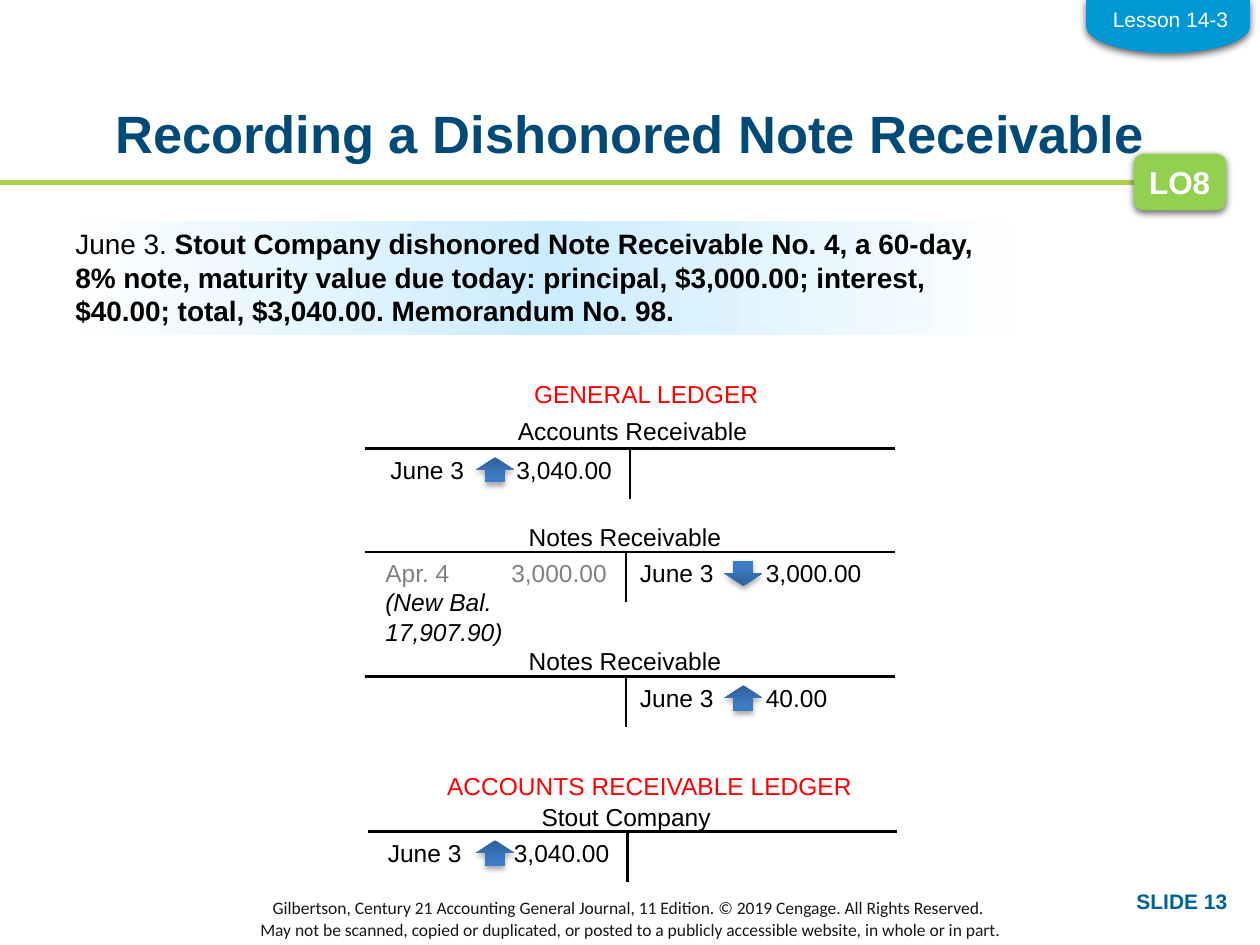
from lxml import etree
from pptx import Presentation
from pptx.dml.color import RGBColor
from pptx.enum.shapes import MSO_CONNECTOR, MSO_SHAPE
from pptx.enum.text import MSO_ANCHOR, PP_ALIGN
from pptx.oxml.ns import qn
from pptx.util import Inches, Pt

LEFT, MID, RIGHT = PP_ALIGN.LEFT, PP_ALIGN.CENTER, PP_ALIGN.RIGHT
TOP, MIDDLE = MSO_ANCHOR.TOP, MSO_ANCHOR.MIDDLE
LINE = MSO_CONNECTOR.STRAIGHT
RECT, ROUND = MSO_SHAPE.RECTANGLE, MSO_SHAPE.ROUNDED_RECTANGLE
ARROW, DELAY = MSO_SHAPE.DOWN_ARROW, MSO_SHAPE.FLOWCHART_DELAY

BLACK = RGBColor(0, 0, 0)
WHITE = RGBColor(255, 255, 255)
GRAY = RGBColor(0x80, 0x80, 0x80)
RED = RGBColor(255, 0, 0)
NAVY = RGBColor(0x00, 0x4A, 0x78)
TEAL = RGBColor(0x00, 0x61, 0x98)
BLUE = RGBColor(0x00, 0x98, 0xD4)
PALE = RGBColor(0xCC, 0xEC, 0xFF)
GREEN = RGBColor(0x92, 0xD0, 0x50)
LIME = RGBColor(0xAA, 0xD2, 0x4B)
INK = RGBColor(0x18, 0x17, 0x17)
DEEP = RGBColor(0x2F, 0x5F, 0x99)
STEEL = RGBColor(0x3D, 0x7C, 0xC7)
SKY = RGBColor(0x3A, 0x7C, 0xCB)

# Content
TITLE = "Recording a Dishonored Note Receivable"
EVENT = [
    ("June 3. ", {}),
    ("Stout Company dishonored Note Receivable No. 4, a 60-day, 8% note, "
     "maturity value due today: principal, $3,000.00; interest, $40.00; "
     "total, $3,040.00. Memorandum No. 98.", {"bold": True}),
]
CREDIT = [
    "Gilbertson, Century 21 Accounting General Journal, 11 Edition. "
    "© 2019 Cengage. All Rights Reserved. ",
    "May not be scanned, copied or duplicated, or posted to a publicly "
    "accessible website, in whole or in part.",
]
HEADS = [("GENERAL LEDGER", 4.14, 2.96, 2),
         ("ACCOUNTS RECEIVABLE LEDGER", 3.45, 6.07, 3.77)]

# Accounts: name, name box (left, top, width), bar (left, top), stem,
# entries (left, width, rows), arrow (left, points up)
OLD = [("Apr. 4\t3,000.00", {"color": GRAY}),
       ("(New Bal.\t17,907.90)", {"italic": True})]
ACCOUNTS = [
    ("Accounts Receivable", (3.37, 3.25, 3.3), (2.9, 3.56), 5,
     [(3, 2, [("June 3\t3,040.00", {})])], (3.78, True)),
    ("Notes Receivable", (3.2, 4.09, 3.52), (2.9, 4.38), 4.97,
     [(4.98, 2.12, [("June 3\t3,000.00", {})]), (2.96, 2, OLD)],
     (5.75, False)),
    ("Notes Receivable", (3.2, 5.08, 3.52), (2.9, 5.37), 4.97,
     [(4.98, 2.12, [("June 3\t40.00", {})])], (5.75, True)),
    ("Stout Company", (3.35, 6.32, 3.24), (2.92, 6.6), 4.98,
     [(2.98, 2, [("June 3\t3,040.00", {})])], (3.78, True)),
]
BAR, STEM, ROW, TAB = 4.2, 0.4, 0.34, 1

prs = Presentation()
prs.slide_width, prs.slide_height = Inches(10), Inches(7.5)
slide = prs.slides.add_slide(prs.slide_layouts[6])
shapes = slide.shapes


def sub(node, tag, **attrs):
    return etree.SubElement(node, qn(tag), {k: str(v) for k, v in attrs.items()})


def write(shape, paras, size, color=BLACK, align=LEFT, font="Arial",
          anchor=TOP, wrap=True, tab=None):
    """Fill a shape with paragraphs, each a list of (text, style) runs."""
    frame = shape.text_frame
    frame.word_wrap = wrap
    frame.vertical_anchor = anchor
    for i, runs in enumerate(paras):
        para = frame.paragraphs[0] if i == 0 else frame.add_paragraph()
        para.alignment = align
        if tab:
            tabs = sub(para._p.get_or_add_pPr(), "a:tabLst")
            sub(tabs, "a:tab", pos=Inches(tab), algn="l")
        for words, style in runs:
            run = para.add_run()
            run.text = words
            run.font.name, run.font.size = font, Pt(size)
            run.font.bold = style.get("bold", False)
            run.font.italic = style.get("italic", False)
            run.font.color.rgb = style.get("color", color)
    return frame


def label(at, paras, size, **opts):
    box = shapes.add_textbox(*map(Inches, at))
    return write(box, paras, size, **opts)


def rule(x1, y1, x2, y2, color=BLACK, width=1.5):
    line = shapes.add_connector(LINE, *map(Inches, (x1, y1, x2, y2)))
    line.line.color.rgb, line.line.width = color, Pt(width)
    sub(line._element.spPr, "a:effectLst")


def block(kind, at, fill, angle=0, shade=None):
    """Add a shape; fill is a colour or a list of gradient stops."""
    shape = shapes.add_shape(kind, *map(Inches, at))
    shape.shadow.inherit = False
    shape.line.fill.background()
    if isinstance(fill, list):
        shape.fill.gradient()
        grad = shape._element.spPr.find(qn("a:gradFill"))
        stops = grad.find(qn("a:gsLst"))
        for old in list(stops):
            stops.remove(old)
        for pos, color in fill:
            sub(sub(stops, "a:gs", pos=pos * 1000), "a:srgbClr", val=color)
        grad.find(qn("a:lin")).set("ang", str(angle * 60000))
    else:
        shape.fill.solid()
        shape.fill.fore_color.rgb = fill
    if shade:
        alpha, blur, dist = shade
        fx = shape._element.spPr.find(qn("a:effectLst"))
        drop = sub(fx, "a:outerShdw", blurRad=Pt(blur), dist=Pt(dist),
                   dir=90 * 60000, rotWithShape=0)
        sub(sub(drop, "a:srgbClr", val=BLACK), "a:alpha", val=alpha * 1000)
    return shape


# Header rule, footer and title
rule(0, 1.45, 9.5, 1.45, LIME, 3)
label((0, 7.14, 10, 0.3), [[(t, {})] for t in CREDIT], 10, color=INK,
      align=MID, font="Calibri", anchor=MIDDLE)
head = label((0.69, 0.86, 8.62, 0.74), [[(TITLE, {"bold": True})]], 30,
             color=NAVY, align=MID)
head.margin_left = head.margin_right = head.margin_top = head.margin_bottom = 0
head.paragraphs[0].line_spacing = 0.9

# Transaction
panel = block(RECT, (0.5, 1.75, 7.67, 0.91),
              [(0, WHITE), (50, PALE), (100, WHITE)], 180)
write(panel, [EVENT], 16)

# Ledger headings
for words, x, y, w in HEADS:
    label((x, y, w, ROW), [[(words, {})]], 14, color=RED)

# T accounts
for name, (nx, ny, nw), (x, y), stem, entries, (ax, up) in ACCOUNTS:
    label((nx, ny, nw, ROW), [[(name, {})]], 14, align=MID)
    rule(x, y, x + BAR, y)
    rule(stem, y, stem, y + STEM)
    for ex, ew, rows in entries:
        label((ex, y, ew, ROW + 0.23 * (len(rows) - 1)),
              [[row] for row in rows], 14, tab=TAB)
    arrow = block(ARROW, (ax, y + 0.07, 0.3, 0.2),
                  [(0, DEEP), (80, STEEL), (100, SKY)], 270, (35, 3.1, 1.8))
    if up:
        arrow._element.spPr.find(qn("a:xfrm")).set("flipV", "1")

# Objective badge, slide number and lesson tab
DROP = (63, 4.5, 1.5)
badge = block(ROUND, (9, 1.22, 0.73, 0.45), GREEN, shade=DROP)
write(badge, [[("LO8", {"bold": True})]], 18, color=WHITE, anchor=MIDDLE,
      wrap=False)
label((7.84, 7, 2, 0.3), [[("SLIDE 13", {"bold": True})]], 12, color=TEAL,
      align=RIGHT)
flap = block(DELAY, (9.06, -0.44, 0.42, 1.3), BLUE, shade=DROP)
flap.rotation = 90
label((8.73, 0, 1.12, 0.3), [[("Lesson 14-3", {})]], 12, color=WHITE,
      align=MID, wrap=False)

prs.save("out.pptx")
